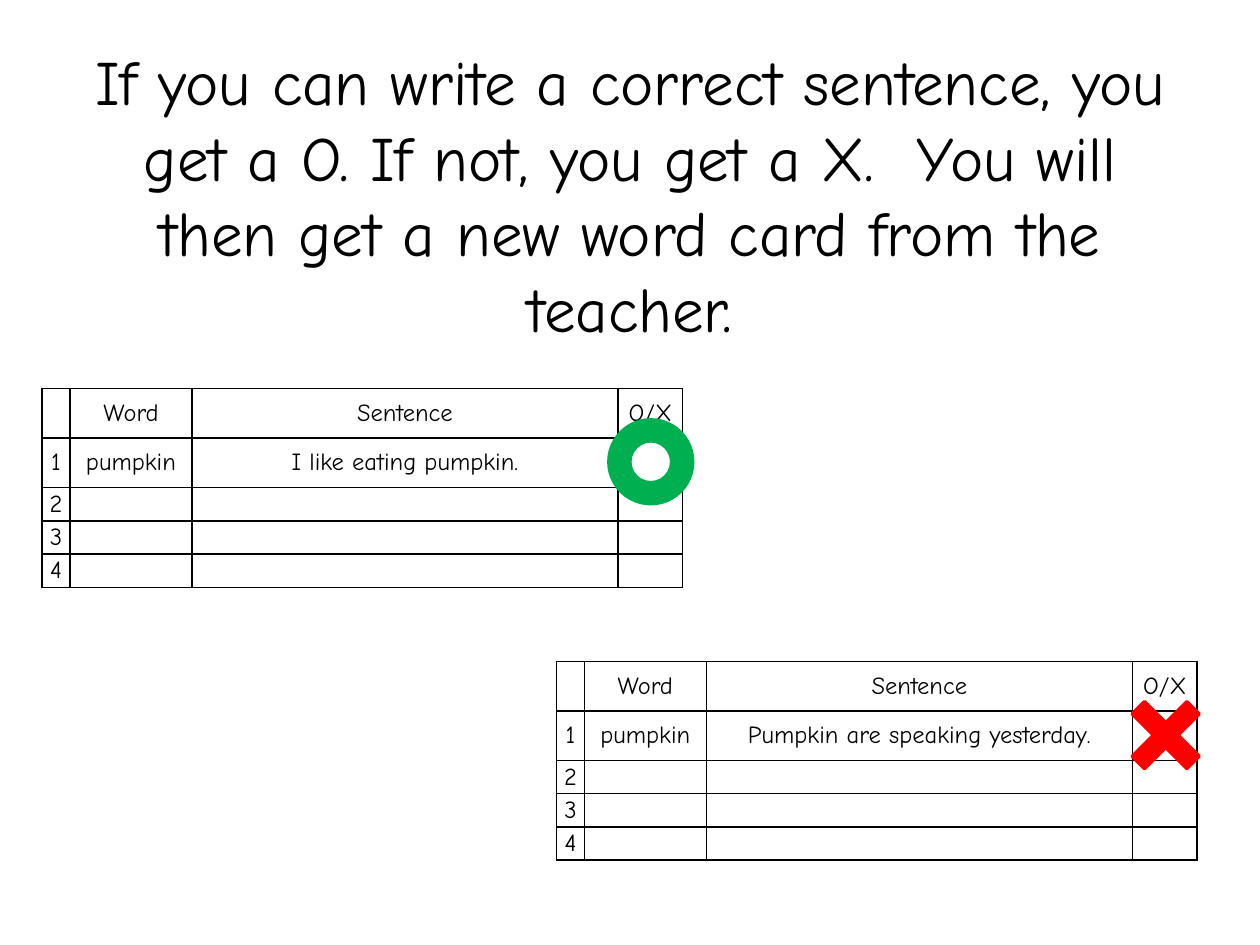
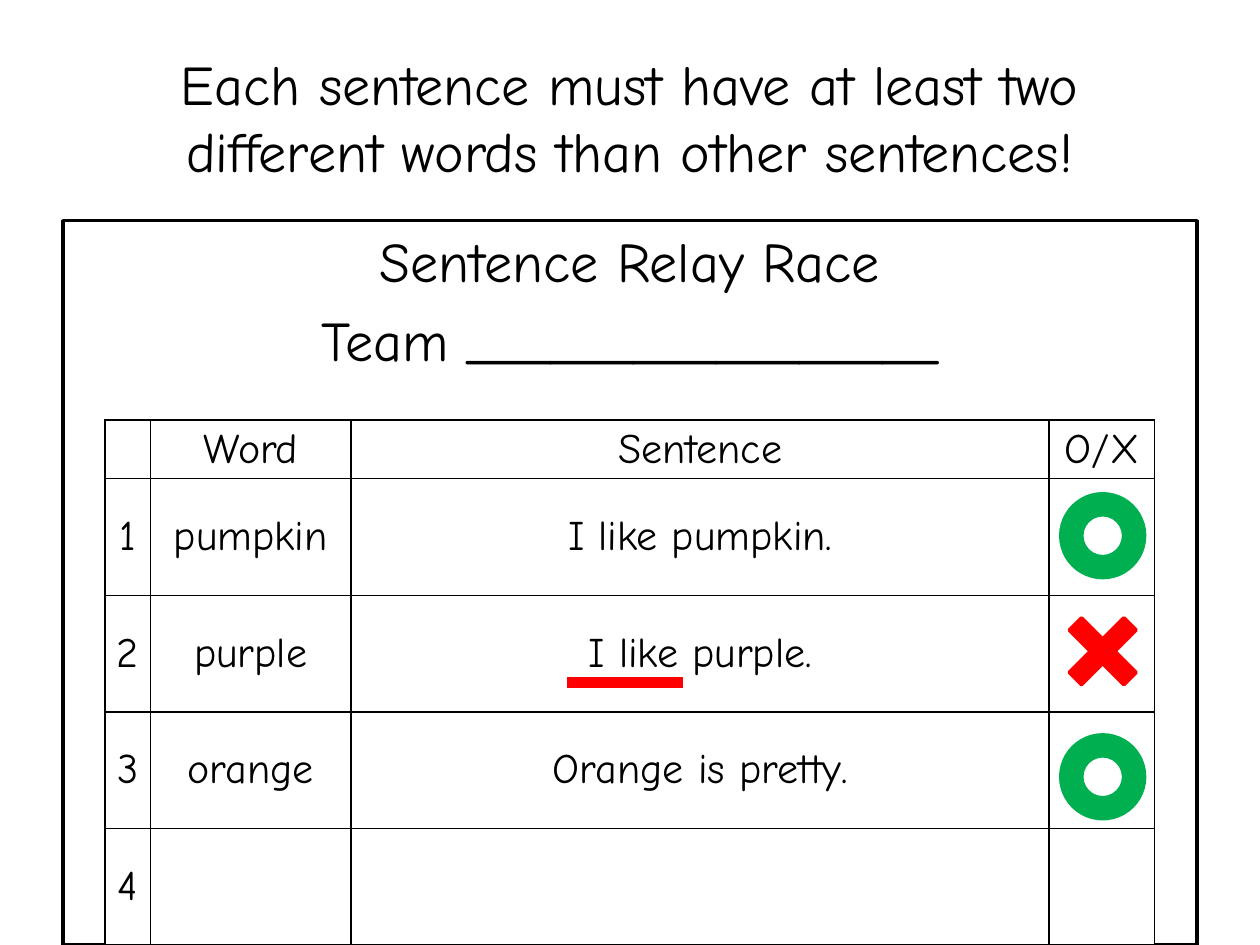
from dataclasses import dataclass

from lxml import etree
from pptx import Presentation
from pptx import util as u
from pptx.dml.color import RGBColor
from pptx.enum import shapes, text
from pptx.oxml import ns

# Shared style
BLACK = RGBColor(0x00, 0x00, 0x00)
WHITE = RGBColor(0xFF, 0xFF, 0xFF)
GREEN = RGBColor(0x00, 0xB0, 0x50)
RED = RGBColor(0xFF, 0x00, 0x00)
FONT = "Comic Neue"
HEADER = ("", "Word", "Sentence", "O/X")
ANSWER_ROWS = 4


@dataclass(frozen=True)
class ScoreSheet:
    """A table of answers; lengths are in centimetres."""
    left: float
    top: float
    columns: tuple[float, ...]
    rows: tuple[float, ...]
    size: int
    answers: tuple[tuple[str, str], ...]


@dataclass(frozen=True)
class Mark:
    """A right or wrong mark, placed by its centre in centimetres."""
    x: float
    y: float
    correct: bool


SMALL_COLUMNS = (0.56, 2.46, 8.59, 1.3)
SMALL_ROWS = (1, 1, 0.67, 0.67, 0.67)
RIGHT_SHEET = ScoreSheet(0.85, 7.83, SMALL_COLUMNS, SMALL_ROWS, 14,
                         (("pumpkin", "I like eating pumpkin."),))
WRONG_SHEET = ScoreSheet(11.22, 13.33, SMALL_COLUMNS, SMALL_ROWS, 14,
                         (("pumpkin", "Pumpkin are speaking yesterday."),))
TEAM_SHEET = ScoreSheet(2.12, 8.47, (0.91, 4.05, 14.07, 2.12),
                        (1.18,) + (2.35,) * ANSWER_ROWS, 24,
                        (("pumpkin", "I like pumpkin."),
                         ("purple", "I like purple."),
                         ("orange", "Orange is pretty.")))
EXAMPLE_MARKS = (Mark(13.12, 9.31, True), Mark(23.5, 14.82, False))
TEAM_MARKS = (Mark(22.23, 10.8, True), Mark(22.23, 13.13, False),
              Mark(22.23, 15.66, True))


def write_text(frame, content: str, *, size: int, space_before: float = 0,
               anchor=text.MSO_ANCHOR.MIDDLE) -> None:
    """Write centred text, one paragraph for each line of content."""
    frame.word_wrap = True
    frame.vertical_anchor = anchor
    for index, line in enumerate(content.split("\n")):
        paragraph = frame.add_paragraph() if index else frame.paragraphs[0]
        paragraph.alignment = text.PP_ALIGN.CENTER
        if index:
            paragraph.space_before = u.Pt(space_before)
        if line:
            run = paragraph.add_run()
            run.text = line
            run.font.name = FONT
            run.font.size = u.Pt(size)
            run.font.color.rgb = BLACK
        else:
            # An empty cell keeps the row height of its font size
            paragraph._p.get_or_add_endParaRPr().set("sz", str(size * 100))


def add_titled_slide(presentation, title: str, *, top: float, height: float,
                     size: int, bottom_inset: float = 0.13):
    slide = presentation.slides.add_slide(presentation.slide_layouts[5])
    shape = slide.shapes.title
    shape.left, shape.top = u.Cm(1.27), u.Cm(top)
    shape.width, shape.height = u.Cm(22.86), u.Cm(height)
    write_text(shape.text_frame, title, size=size)
    shape.text_frame.auto_size = text.MSO_AUTO_SIZE.NONE
    shape.text_frame.margin_bottom = u.Cm(bottom_inset)
    return slide


def paint(shape, fill: RGBColor, line: RGBColor) -> None:
    shape.shadow.inherit = False
    shape.fill.solid()
    shape.fill.fore_color.rgb = fill
    shape.line.color.rgb = line
    shape.line.width = u.Pt(2)


def add_borders(cell) -> None:
    properties = cell._tc.get_or_add_tcPr()
    for side in ("lnL", "lnR", "lnT", "lnB"):
        line = etree.SubElement(properties, ns.qn(f"a:{side}"), w=str(u.Pt(1)))
        fill = etree.SubElement(line, ns.qn("a:solidFill"))
        etree.SubElement(fill, ns.qn("a:srgbClr"), val=str(BLACK))


def add_score_sheet(slide, sheet: ScoreSheet) -> None:
    table = slide.shapes.add_table(
        len(sheet.rows), len(sheet.columns), u.Cm(sheet.left), u.Cm(sheet.top),
        u.Cm(sum(sheet.columns)), u.Cm(sum(sheet.rows))).table
    table.first_row = table.horz_banding = False
    for column, width in zip(table.columns, sheet.columns):
        column.width = u.Cm(width)
    for row, height in zip(table.rows, sheet.rows):
        row.height = u.Cm(height)

    # Numbered rows, blank where no answer is given yet
    blanks = (("", ""),) * (ANSWER_ROWS - len(sheet.answers))
    contents = [HEADER]
    for number, answer in enumerate(sheet.answers + blanks, start=1):
        contents.append((str(number), *answer, ""))
    for row, values in zip(table.rows, contents):
        for cell, value in zip(row.cells, values):
            write_text(cell.text_frame, value, size=sheet.size)
            cell.vertical_anchor = text.MSO_ANCHOR.MIDDLE
            cell.margin_left = cell.margin_right = u.Cm(0.13)
            cell.margin_top = cell.margin_bottom = 0
            add_borders(cell)
            cell.fill.solid()
            cell.fill.fore_color.rgb = WHITE


def add_mark(slide, mark: Mark) -> None:
    if mark.correct:
        kind, size, color = shapes.MSO_SHAPE.DONUT, 1.69, GREEN
    else:
        kind, size, color = shapes.MSO_SHAPE.MATH_MULTIPLY, 2.12, RED
    shape = slide.shapes.add_shape(
        kind, u.Cm(mark.x - size / 2), u.Cm(mark.y - size / 2),
        u.Cm(size), u.Cm(size))
    if not mark.correct:
        shape.adjustments[0] = 0.165
    paint(shape, color, color)


def add_underline(slide, left: float, right: float, y: float) -> None:
    line = slide.shapes.add_connector(
        shapes.MSO_CONNECTOR.STRAIGHT, u.Cm(left), u.Cm(y), u.Cm(right), u.Cm(y))
    line.line.color.rgb = RED
    line.line.width = u.Pt(6)
    etree.SubElement(line._element.spPr, ns.qn("a:effectLst"))


def build_example_slide(presentation) -> None:
    slide = add_titled_slide(
        presentation,
        "If you can write a correct sentence, you get a O. If not, you get a X.  "
        "You will then get a new word card from the teacher.",
        top=2.34, height=4.65, size=36, bottom_inset=1.65)
    for sheet in (RIGHT_SHEET, WRONG_SHEET):
        add_score_sheet(slide, sheet)
    for mark in EXAMPLE_MARKS:
        add_mark(slide, mark)


def build_team_slide(presentation) -> None:
    slide = add_titled_slide(
        presentation,
        "Each sentence must have at least two different words than other sentences!",
        top=0.76, height=3.18, size=32)

    # Framed sheet with its heading
    frame = slide.shapes.add_shape(
        shapes.MSO_SHAPE.RECTANGLE, u.Cm(1.27), u.Cm(4.45), u.Cm(22.86), u.Cm(14.6))
    paint(frame, WHITE, BLACK)
    write_text(frame.text_frame, "Sentence Relay Race\nTeam _________________",
               size=32, space_before=6.4, anchor=text.MSO_ANCHOR.TOP)

    # Answers and marks
    add_score_sheet(slide, TEAM_SHEET)
    for mark in TEAM_MARKS:
        add_mark(slide, mark)
    add_underline(slide, 11.43, 13.76, 13.76)


def main() -> None:
    presentation = Presentation()
    presentation.slide_width = u.Cm(25.4)
    presentation.slide_height = u.Cm(19.05)
    build_example_slide(presentation)
    build_team_slide(presentation)
    presentation.save("out.pptx")


if __name__ == "__main__":
    main()
